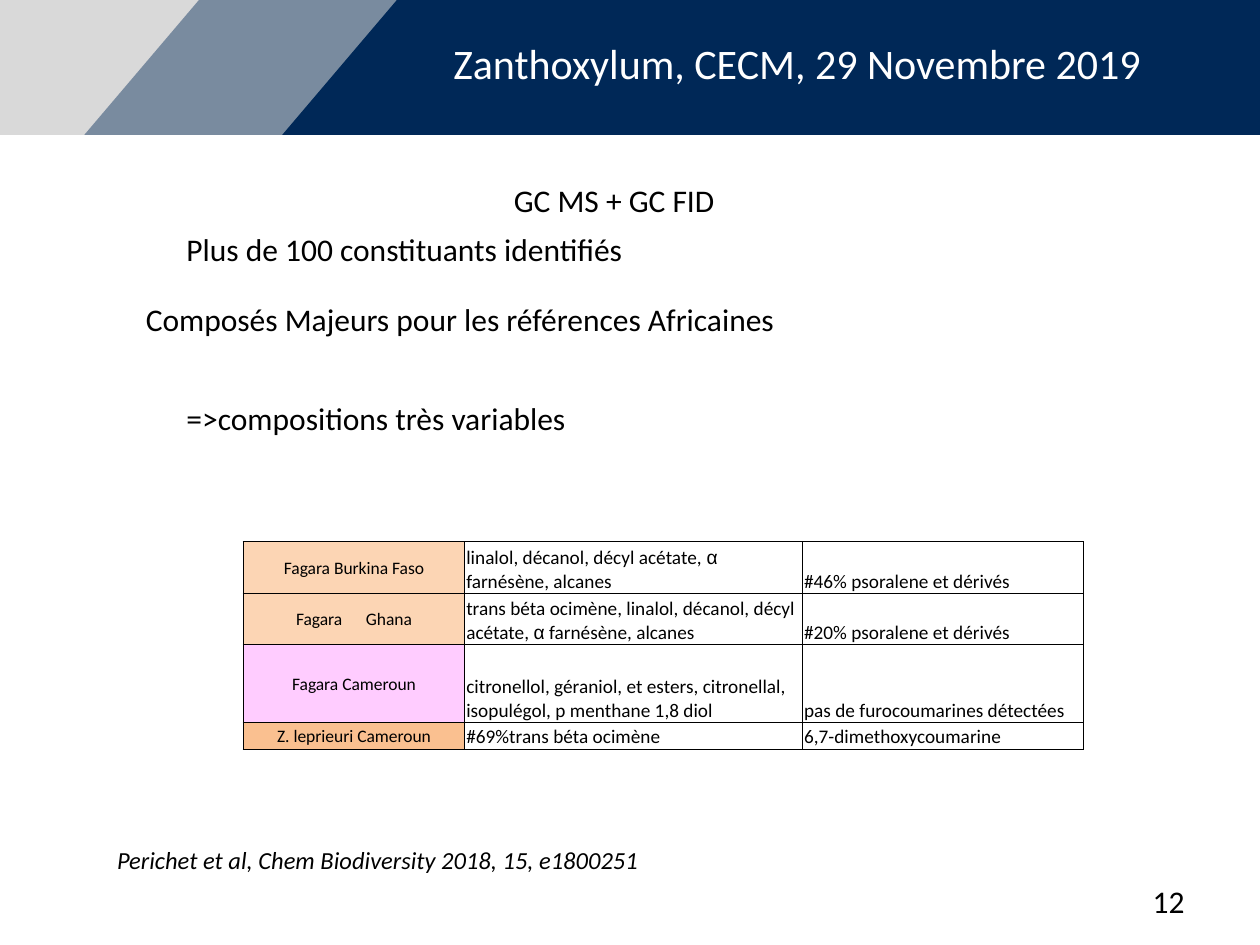
"""Build the Zanthoxylum slide with its table of major compounds."""
from lxml import etree
from pptx import Presentation
from pptx.dml.color import RGBColor
from pptx.enum.shapes import MSO_SHAPE as SHAPE
from pptx.enum.text import MSO_ANCHOR as ANCHOR, PP_ALIGN as ALIGN
from pptx.oxml import parse_xml
from pptx.oxml.ns import nsdecls, qn
from pptx.util import Cm, Pt


def rgb(value):
    return RGBColor.from_string(value)


def style(font, size, color="000000", name="Calibri"):
    font.size = Pt(size)
    font.name = name
    font.color.rgb = rgb(color)


prs = Presentation()
prs.slide_width, prs.slide_height = Cm(25.4), Cm(19.05)
s = prs.slides.add_slide(prs.slide_layouts[6])

bands = [
    (SHAPE.RECTANGLE, 0, 25.4, "D9D9D9", None),
    (SHAPE.PARALLELOGRAM, 1.7, 26.21, "002857", 44),
    (SHAPE.PARALLELOGRAM, 5.69, 22.4, "002857", None),
]
for kind, left, width, color, alpha in bands:
    sp = s.shapes.add_shape(kind, Cm(left), 0, Cm(width), Cm(2.72))
    sp.shadow.inherit = False
    sp.line.fill.background()
    sp.fill.solid()
    sp.fill.fore_color.rgb = rgb(color)
    if kind == SHAPE.PARALLELOGRAM:
        sp.adjustments[0] = 0.85
    if alpha:
        clr = sp.fill._xPr.find(".//" + qn("a:srgbClr"))
        etree.SubElement(clr, qn("a:alpha")).set("val", str(alpha * 1000))

texts = [
    ("Zanthoxylum, CECM, 29 Novembre 2019", 8.89, 0.64, 17.27, 1.27, 24, "FFFFFF", True),
    ("12", 18.21, 17.65, 5.92, 1.02, 18, "000000", True),
    ("GC MS + GC FID", 10.11, 3.53, 4.6, 1.02, 18, "000000", False),
    ("Plus de 100 constituants identifiés", 3.51, 4.52, 13.41, 1.02, 18, "000000", True),
    ("Perichet et al, Chem Biodiversity 2018, 15, e1800251", 2.11, 16.92, 11.38, 0.86, 14, "000000", False),
    ("Composés Majeurs pour les références Africaines", 2.69, 5.92, 13.34, 1.02, 18, "000000", False),
    ("=>compositions très variables", 3.51, 7.92, 8.23, 2.57, 18, "000000", False),
]
for text, left, top, width, height, size, color, wrap in texts:
    tf = s.shapes.add_textbox(Cm(left), Cm(top), Cm(width), Cm(height)).text_frame
    tf.word_wrap = wrap
    p = tf.paragraphs[0]
    p.text = text
    style(p.font, size, color)
    if text == "12":
        p.alignment = ALIGN.RIGHT
    if text.startswith("Perichet"):
        p.font.italic = True

rows = [
    (1.04, "FCD5B4", "Fagara Burkina Faso",
     "linalol, décanol, décyl acétate, α farnésène, alcanes", "#46% psoralene et dérivés"),
    (1.04, "FCD5B4", "Fagara Ghana",
     "trans béta ocimène, linalol, décanol, décyl acétate, α farnésène, alcanes",
     "#20% psoralene et dérivés"),
    (1.57, "FFCCFF", "Fagara Cameroun",
     "citronellol, géraniol, et esters, citronellal, isopulégol, p menthane 1,8 diol",
     "pas de furocoumarines détectées"),
    (0.53, "FAC090", "Z. leprieuri Cameroun", "#69%trans béta ocimène", "6,7-dimethoxycoumarine"),
]
widths = [4.47, 6.81, 5.66]
table = s.shapes.add_table(len(rows), len(widths), Cm(4.9), Cm(10.92),
                           Cm(sum(widths)), Cm(sum(row[0] for row in rows))).table
table.first_row = table.horz_banding = False
for column, width in zip(table.columns, widths):
    column.width = Cm(width)

for i, (height, color, *cells) in enumerate(rows):
    table.rows[i].height = Cm(height)
    for j, text in enumerate(cells):
        cell = table.cell(i, j)
        cell.margin_left = cell.margin_right = cell.margin_top = Cm(0.03)
        cell.margin_bottom = 0
        cell.vertical_anchor = ANCHOR.BOTTOM if j else ANCHOR.MIDDLE
        tcPr = cell._tc.get_or_add_tcPr()
        for side in ("lnL", "lnR", "lnT", "lnB"):
            tcPr.append(parse_xml(
                f'<a:{side} {nsdecls("a")} w="{Pt(0.5)}"><a:solidFill>'
                f'<a:srgbClr val="000000"/></a:solidFill></a:{side}>'))
        if j:
            cell.fill.background()
        else:
            cell.fill.solid()
            cell.fill.fore_color.rgb = rgb(color)
        p = cell.text_frame.paragraphs[0]
        p.alignment = ALIGN.LEFT if j else ALIGN.CENTER
        for part in filter(None, text.partition(" " if text == "Fagara Ghana" else "α")):
            r = p.add_run()
            r.text = part
            style(r.font, 11 if j else 10, name="Arial" if part == "α" else "Calibri")
            if part == " ":
                r._r.get_or_add_rPr().set("spc", "1130")

prs.save("out.pptx")
